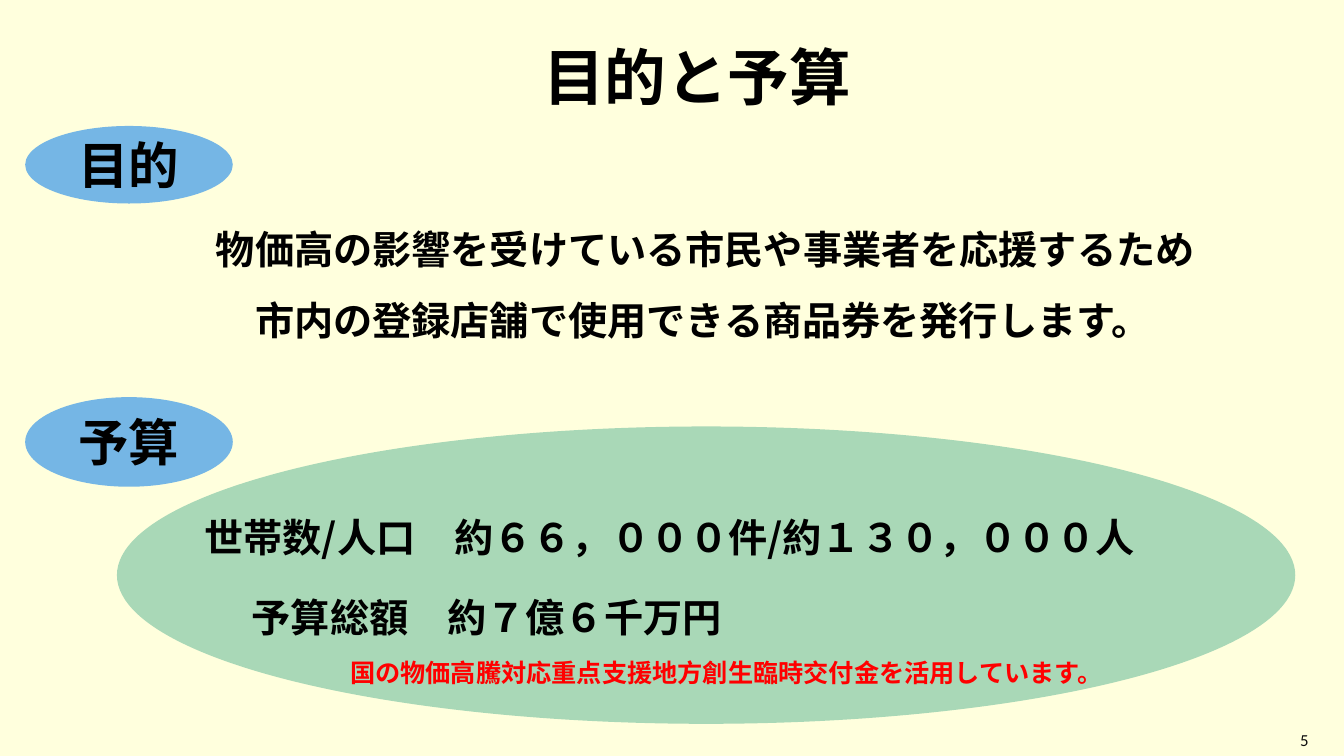
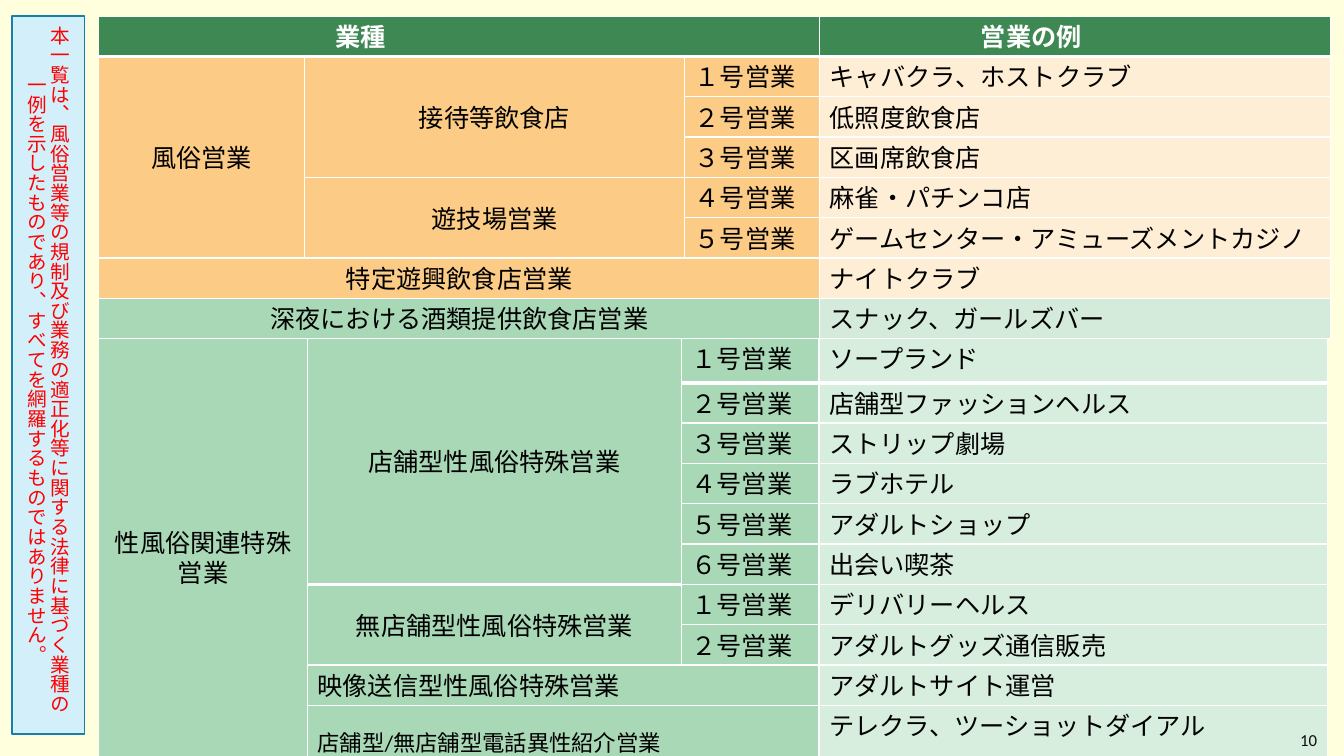
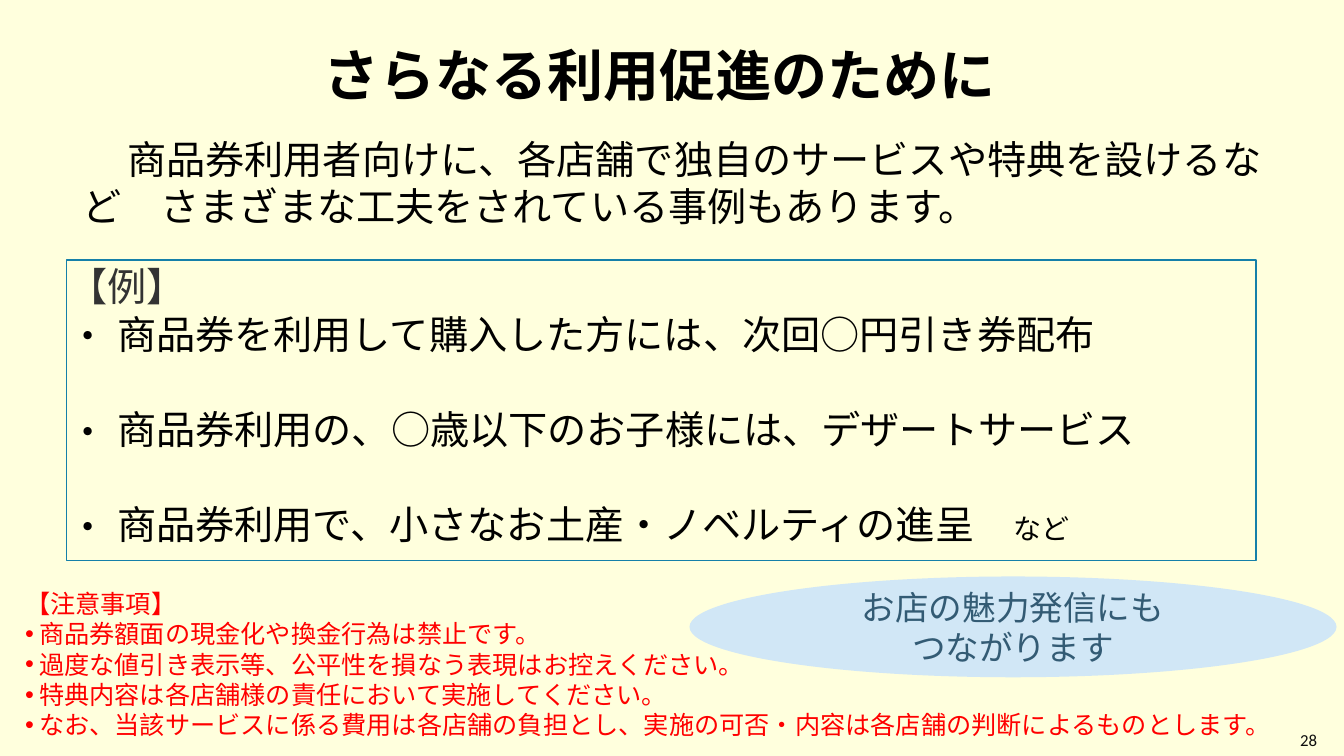
from dataclasses import dataclass, replace
from typing import Any, NamedTuple

from lxml import etree
from pptx import Presentation
from pptx.dml.color import RGBColor
from pptx.enum.shapes import MSO_SHAPE
from pptx.enum.text import MSO_ANCHOR, MSO_AUTO_SIZE, PP_ALIGN
from pptx.oxml.ns import qn
from pptx.util import Pt

ELLIPSE, RECTANGLE = MSO_SHAPE.OVAL, MSO_SHAPE.RECTANGLE
LEFT, CENTER = PP_ALIGN.LEFT, PP_ALIGN.CENTER
TOP, MIDDLE = MSO_ANCHOR.TOP, MSO_ANCHOR.MIDDLE
NO_FIT = MSO_AUTO_SIZE.NONE

GOTHIC, CALIBRI, ARIAL = "Noto Sans CJK JP", "Calibri", "Arial"
CREAM, BLACK, WHITE, RED = "FFFFDD", "000000", "FFFFFF", "FF0000"
BLUE, TEAL, GREEN, PALE_GREEN = "75B6E5", "1580A9", "A9D8B7", "D7EDDD"
DARK_GREEN, ORANGE, PALE_ORANGE = "3E8853", "FCCC86", "FEEED6"
TITLE_AND_BODY, BLANK = 1, 6


class Area(NamedTuple):
    left: float
    top: float
    width: float
    height: float


@dataclass(frozen=True)
class Style:
    size: float
    font: str = GOTHIC
    color: str = BLACK
    bold: bool = False


@dataclass(frozen=True)
class Span:
    text: str
    style: Style


@dataclass(frozen=True)
class Para:
    """Lengths are points; line is the exact line height."""
    spans: tuple[Span, ...]
    line: float
    align: Any = LEFT
    before: float = 0
    margin: float = 0
    indent: float = 0
    bullet: str = ""
    bullet_font: str = GOTHIC


@dataclass(frozen=True)
class Entry:
    row: int
    column: int
    text: str
    rows: int = 1
    columns: int = 1
    align: Any = LEFT
    anchor: Any = TOP
    size: float = 18
    margin: float = 0


@dataclass(frozen=True)
class Grid:
    left: float
    top: float
    widths: tuple[float, ...]
    heights: tuple[float, ...]
    fills: tuple[tuple[str, str], ...]
    entries: tuple[Entry, ...]
    header: bool = False


HEADING = Style(44, bold=True)
STRONG = Style(28, bold=True)
LABEL = Style(36, bold=True)
PLAIN = Style(28)
PLAIN_CALIBRI = Style(28, CALIBRI)
NOTICE = Style(18, ARIAL, RED)


def rgb(color: str) -> RGBColor:
    return RGBColor.from_string(color)


def plain(text: str, style: Style, line: float, **options: Any) -> Para:
    return Para((Span(text, style),), line, **options)


def apply(target: Any, values: dict[str, Any]) -> None:
    for name, value in values.items():
        setattr(target, name, value)


def add_span(para: Any, span: Span) -> None:
    run = para.add_run()
    run.text = span.text
    style = span.style
    apply(run.font, {"size": Pt(style.size), "bold": style.bold, "name": style.font})
    run.font.color.rgb = rgb(style.color)
    east_asian = etree.Element(qn("a:ea"), typeface=style.font)
    run._r.get_or_add_rPr().find(qn("a:latin")).addnext(east_asian)


def write(frame: Any, paras: list[Para]) -> None:
    for index, source in enumerate(paras):
        para = frame.paragraphs[0] if index == 0 else frame.add_paragraph()
        properties = para._p.get_or_add_pPr()
        properties.set("marL", str(Pt(source.margin)))
        properties.set("indent", str(Pt(source.indent)))
        if source.bullet:
            etree.SubElement(properties, qn("a:buFont"), typeface=source.bullet_font)
            etree.SubElement(properties, qn("a:buChar"), char=source.bullet)
        else:
            etree.SubElement(properties, qn("a:buNone"))
        apply(para, {"alignment": source.align, "line_spacing": Pt(source.line),
                     "space_before": Pt(source.before), "space_after": Pt(0)})
        for span in source.spans:
            add_span(para, span)


def fill_frame(shape: Any, paras: list[Para], anchor: Any = TOP,
               left: float = 7.2, top: float = 3.6) -> None:
    apply(shape.text_frame, {
        "word_wrap": True, "auto_size": NO_FIT, "vertical_anchor": anchor,
        "margin_left": Pt(left), "margin_right": Pt(7.2),
        "margin_top": Pt(top), "margin_bottom": Pt(3.6)})
    write(shape.text_frame, paras)


def place(shape: Any, area: Area) -> Any:
    apply(shape, {name: Pt(value) for name, value in area._asdict().items()})
    return shape


def add_text(page: Any, area: Area, paras: list[Para], anchor: Any = TOP) -> None:
    box = page.shapes.add_textbox(*map(Pt, area))
    fill_frame(box, paras, anchor)


def add_figure(page: Any, kind: Any, area: Area, fill: str,
               paras: list[Para], line: str = "") -> Any:
    figure = page.shapes.add_shape(kind, *map(Pt, area))
    figure.shadow.inherit = False
    figure.fill.solid()
    figure.fill.fore_color.rgb = rgb(fill)
    set_outline(figure, line)
    if paras:
        fill_frame(figure, paras, MIDDLE)
    return figure


def set_outline(shape: Any, color: str) -> None:
    if color:
        shape.line.color.rgb = rgb(color)
        shape.line.width = Pt(1.25)
    else:
        shape.line.fill.background()


def add_page(deck: Any, layout: int, number: int) -> Any:
    page = deck.slides.add_slide(deck.slide_layouts[layout])
    for holder in list(page.placeholders):
        if holder.placeholder_format.idx >= 10:
            holder.element.getparent().remove(holder.element)
    add_text(page, Area(921.6, 517.7, 38, 21.6),
             [plain(str(number), Style(12, CALIBRI, "0D0D0D"), 14.4)], MIDDLE)
    return page


def set_title(page: Any, area: Area, text: str, style: Style) -> None:
    title = place(page.shapes.title, area)
    fill_frame(title, [plain(text, style, style.size * 1.2, align=CENTER)])


def set_borders(cell: Any, bottom: float) -> None:
    properties = cell._tc.get_or_add_tcPr()
    widths = {"a:lnL": 1, "a:lnR": 1, "a:lnT": 1, "a:lnB": bottom}
    for index, (tag, width) in enumerate(widths.items()):
        line = etree.Element(qn(tag), w=str(Pt(width)))
        paint = etree.SubElement(line, qn("a:solidFill"))
        etree.SubElement(paint, qn("a:srgbClr"), val=WHITE)
        properties.insert(index, line)


def add_grid(page: Any, grid: Grid) -> None:
    """Each row of fills holds the category colour and the example colour."""
    area = Area(grid.left, grid.top, sum(grid.widths), sum(grid.heights))
    table = page.shapes.add_table(len(grid.heights), len(grid.widths),
                                  *map(Pt, area)).table
    apply(table, {"first_row": False, "horz_banding": False})
    for column, width in zip(table.columns, grid.widths):
        column.width = Pt(width)
    last = len(grid.widths) - 1
    for row, height in enumerate(grid.heights):
        table.rows[row].height = Pt(height)
        for column in range(len(grid.widths)):
            cell = table.cell(row, column)
            cell.fill.solid()
            cell.fill.fore_color.rgb = rgb(grid.fills[row][column == last])
            apply(cell, {"margin_top": Pt(5), "margin_bottom": Pt(2),
                         "margin_right": Pt(7.2 if column == 0 else 0)})
            set_borders(cell, 3 if row == 0 else 1)
    for entry in grid.entries:
        cell = table.cell(entry.row, entry.column)
        if entry.rows * entry.columns > 1:
            cell.merge(table.cell(entry.row + entry.rows - 1,
                                  entry.column + entry.columns - 1))
        if entry.align == CENTER:
            cell.margin_right = Pt(7.2)
        cell.vertical_anchor = entry.anchor
        heading = grid.header and entry.row == 0
        style = Style(entry.size, CALIBRI, WHITE if heading else BLACK, heading)
        write(cell.text_frame, [plain(entry.text, style, 21.5, align=entry.align,
                                      margin=entry.margin)])


def numbered(first_row: int, digits: str) -> tuple[Entry, ...]:
    return tuple(Entry(first_row + index, 2, f"{digit}号営業")
                 for index, digit in enumerate(digits))


def examples(first_row: int, names: list[str]) -> tuple[Entry, ...]:
    return tuple(Entry(first_row + index, 3, name) for index, name in enumerate(names))


def group(row: int, column: int, text: str, rows: int, columns: int = 1) -> Entry:
    return Entry(row, column, text, rows, columns, CENTER, MIDDLE)


ENTERTAINMENT = Grid(
    70.6, 11.5, (147, 271.4, 96.5, 365), (28.8,) * 8,
    ((DARK_GREEN, DARK_GREEN), *((ORANGE, PALE_ORANGE),) * 6, (GREEN, "D4EBDB")),
    (Entry(0, 0, "業種", columns=3, margin=162),
     Entry(0, 3, "営業の例", margin=108),
     group(1, 0, "風俗営業", 5),
     group(1, 1, "接待等飲食店", 3),
     group(4, 1, "遊技場営業", 2),
     group(6, 0, "特定遊興飲食店営業", 1, 3),
     group(7, 0, "深夜における酒類提供飲食店営業", 1, 3),
     *numbered(1, "１２３４５"),
     *examples(1, ["キャバクラ、ホストクラブ", "低照度飲食店", "区画席飲食店",
                   "麻雀・パチンコ店", "ゲームセンター・アミューズメントカジノ",
                   "ナイトクラブ", "スナック、ガールズバー"])),
    header=True)

SPECIAL = Grid(
    70.6, 241.9, (149, 267.1, 98.4, 363.4), (31.5, *(28.8,) * 8, 35.5),
    ((GREEN, PALE_GREEN),) * 10,
    (group(0, 0, "性風俗関連特殊営業", 10),
     group(0, 1, "店舗型性風俗特殊営業", 6),
     group(6, 1, "無店舗型性風俗特殊営業", 2),
     Entry(8, 1, "映像送信型性風俗特殊営業", columns=2, anchor=MIDDLE),
     Entry(9, 1, "店舗型/無店舗型電話異性紹介営業", columns=2,
           anchor=MIDDLE, size=16),
     *numbered(0, "１２３４５６"), *numbered(6, "１２"),
     *examples(0, ["ソープランド", "店舗型ファッションヘルス", "ストリップ劇場",
                   "ラブホテル", "アダルトショップ", "出会い喫茶",
                   "デリバリーヘルス", "アダルトグッズ通信販売",
                   "アダルトサイト運営", "テレクラ、ツーショットダイアル"])))


def build_purpose(deck: Any) -> None:
    page = add_page(deck, TITLE_AND_BODY, 5)
    set_title(page, Area(379, 24.5, 238, 60), "目的と予算", HEADING)
    for text, top, height in (("目的", 90, 55.4), ("予算", 283.7, 64)):
        add_figure(page, ELLIPSE, Area(18, top, 148.3, height), BLUE,
                   [plain(text, LABEL, 43, align=CENTER)])
    add_figure(page, ELLIPSE, Area(83.5, 304.6, 841.7, 212.4), GREEN, [])
    fill_frame(place(page.placeholders[1], Area(147, 140, 755, 110)), [
        plain("物価高の影響を受けている市民や事業者を応援するため", STRONG, 51),
        plain("市内の登録店舗で使用できる商品券を発行します。", STRONG, 51, margin=28)])
    note = Style(18, color=RED, bold=True)
    budget = (
        (Area(139, 345.5, 770, 58),
         plain("世帯数/人口　約６６，０００件/約１３０，０００人", STRONG, 51)),
        (Area(172.8, 402.6, 736, 58), plain("予算総額　約７億６千万円", STRONG, 51)),
        (Area(243, 465.5, 640, 30),
         plain("国の物価高騰対応重点支援地方創生臨時交付金を活用しています。", note, 22)))
    for area, para in budget:
        add_text(page, area, [para])


def build_business_types(deck: Any) -> None:
    page = add_page(deck, BLANK, 10)
    for grid in (ENTERTAINMENT, SPECIAL):
        add_grid(page, grid)
    number = page.shapes[0].element
    number.getparent().append(number)
    red = Style(14, CALIBRI, RED)
    lines = ("本一覧は、風俗営業等の規制及び業務の適正化等に関する法律に基づく業種の",
             "一例を示したものであり、すべてを網羅するものではありません。")
    caution = add_figure(page, RECTANGLE, Area(8.6, 11.5, 51.8, 512.6), "D2EFFA",
                         [plain(line, red, 17, align=CENTER) for line in lines], TEAL)
    caution.text_frame._txBody.bodyPr.set("vert", "eaVert")


def build_promotion(deck: Any) -> None:
    page = add_page(deck, TITLE_AND_BODY, 28)
    set_title(page, Area(0, 25.5, 942, 56), "さらなる利用促進のために",
              replace(HEADING, size=40))
    add_text(page, Area(51.8, 92.5, 870, 80), [plain(
        "商品券利用者向けに、各店舗で独自のサービスや特典を設けるなど　"
        "さまざまな工夫をされている事例もあります。", PLAIN_CALIBRI, 34, indent=32)])

    ideas = ((Span("商品券を利用して購入した方には、次回○円引き券配布", PLAIN),),
             (Span("商品券利用の、○歳以下のお子様には、デザートサービス", PLAIN),),
             (Span("商品券利用で、", PLAIN),
              Span("小さなお土産・ノベルティの進呈　", PLAIN_CALIBRI),
              Span("など", Style(20, CALIBRI))))
    frame = place(page.placeholders[1], Area(47.5, 185.8, 849.6, 214.6))
    set_outline(frame, TEAL)
    fill_frame(frame, [plain("【例】", replace(PLAIN, color="333333"), 34)] + [
        Para(spans, 34, before=34 if index else 0, margin=34.6, indent=-34.6,
             bullet="・") for index, spans in enumerate(ideas)], left=1.5, top=1.5)

    appeal = Style(24, CALIBRI, "335B74")
    add_figure(page, ELLIPSE, Area(492.5, 411.8, 462.2, 72), "D1E7F6",
               [plain(line, appeal, 29, align=CENTER)
                for line in ("お店の魅力発信にも", "つながります")])
    rules = (("商品券額面の現金化や換金行為は禁止です。", ARIAL),
             ("過度な値引き表示等、公平性を損なう表現はお控えください。", ARIAL),
             ("特典内容は各店舗様の責任において実施してください。", ARIAL),
             ("なお、当該サービスに係る費用は各店舗の負担とし、実施の可否・内容は"
              "各店舗の判断によるものとします。", CALIBRI))
    add_text(page, Area(10.8, 416.8, 924, 116), [plain("【注意事項】", NOTICE, 21.6)] + [
        plain(text, replace(NOTICE, font=font), 21.6, margin=10, indent=-10,
              bullet="•", bullet_font=ARIAL) for text, font in rules])


def main() -> None:
    deck = Presentation()
    apply(deck, {"slide_width": Pt(960), "slide_height": Pt(540)})
    background = deck.slide_master.background.fill
    background.solid()
    background.fore_color.rgb = rgb(CREAM)
    for build in (build_purpose, build_business_types, build_promotion):
        build(deck)
    deck.save("out.pptx")


if __name__ == "__main__":
    main()
